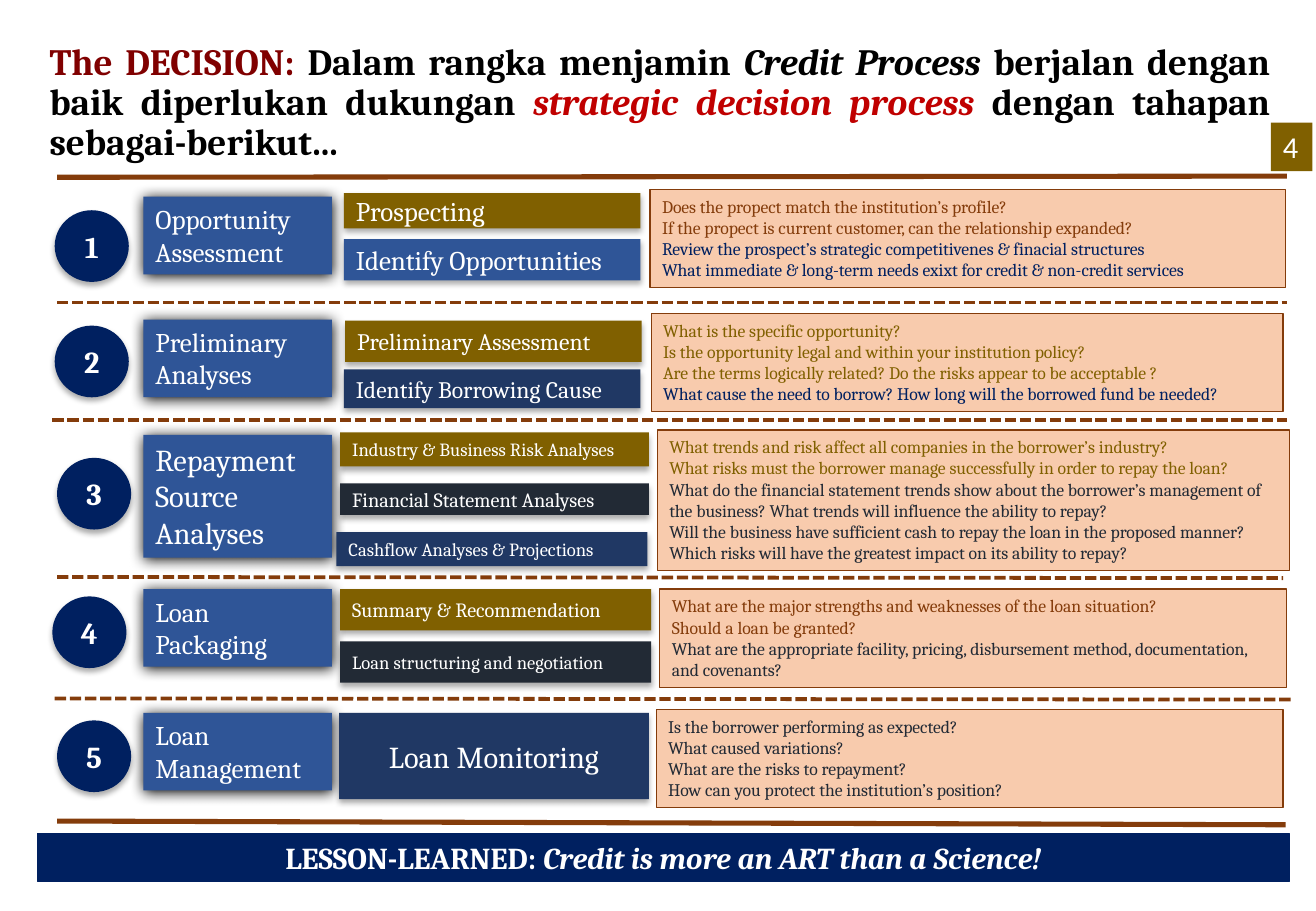
from lxml import etree
from pptx import Presentation
from pptx.dml.color import RGBColor
from pptx.enum.dml import MSO_LINE
from pptx.enum.shapes import MSO_CONNECTOR, MSO_SHAPE
from pptx.enum.text import MSO_ANCHOR, PP_ALIGN
from pptx.oxml.ns import qn
from pptx.util import Pt

RECTANGLE, OVAL = MSO_SHAPE.RECTANGLE, MSO_SHAPE.OVAL
STRAIGHT, DASHED = MSO_CONNECTOR.STRAIGHT, MSO_LINE.SQUARE_DOT
TOP, MIDDLE = MSO_ANCHOR.TOP, MSO_ANCHOR.MIDDLE
LEFT, CENTER, JUSTIFY = PP_ALIGN.LEFT, PP_ALIGN.CENTER, PP_ALIGN.JUSTIFY

NAVY, BLUE, DEEP, SLATE = "002060", "2F5597", "203864", "222A35"
GOLD, BROWN, PEACH = "806000", "843C0B", "F8CBAD"
WHITE, BLACK, MAROON, RED = "FFFFFF", "000000", "800000", "C00000"
GLOW, DROP = (100, 8.5, 1), (32, 3.5, 2.2)


def color(value):
    return RGBColor.from_string(value)


class Page:
    font = "Cambria"

    def __init__(self, deck):
        self.slide = deck.slides.add_slide(deck.slide_layouts[6])

    def set_text(self, paragraph, text, size, ink, align=LEFT, bold=False, font=None):
        paragraph.text = text
        paragraph.alignment = align
        paragraph.font.name = font or self.font
        paragraph.font.size = Pt(size)
        paragraph.font.bold = bold
        paragraph.font.color.rgb = color(ink)

    def add_span(self, paragraph, text, ink=None, italic=False):
        span = paragraph.add_run()
        span.text = text
        span.font.italic = italic
        if ink:
            span.font.color.rgb = color(ink)

    def title(self, place, spans):
        box = self.slide.shapes.add_textbox(*map(Pt, place))
        frame = box.text_frame
        frame.word_wrap = True
        frame.vertical_anchor = MIDDLE
        paragraph = frame.paragraphs[0]
        self.set_text(paragraph, "", 22, BLACK, JUSTIFY, True)
        paragraph.line_spacing = 0.9
        for span in spans:
            self.add_span(paragraph, *span)

    def box(self, place, fill, lines, size, align=LEFT, anchor=MIDDLE, bold=False,
            kind=RECTANGLE, edge=None, shadow=None, font=None):
        box = self.slide.shapes.add_shape(kind, *map(Pt, place))
        box.fill.solid()
        box.fill.fore_color.rgb = color(fill)
        if edge:
            box.line.color.rgb = color(edge)
            box.line.width = Pt(0.75)
        else:
            box.line.fill.background()
        box.shadow.inherit = False
        if shadow:
            self.cast(box, *shadow)
        frame = box.text_frame
        frame.word_wrap = True
        frame.vertical_anchor = anchor
        for index, (text, ink) in enumerate(lines):
            paragraph = frame.add_paragraph() if index else frame.paragraphs[0]
            self.set_text(paragraph, text, size, ink, align, bold, font)
        return box

    def cast(self, box, opacity, blur, distance):
        effects = box._element.spPr.find(qn("a:effectLst"))
        outer = etree.SubElement(effects, qn("a:outerShdw"), blurRad=str(Pt(blur)),
                                 dist=str(Pt(distance)), dir="5400000", rotWithShape="0")
        tint = etree.SubElement(outer, qn("a:srgbClr"), val=BLACK)
        etree.SubElement(tint, qn("a:alpha"), val=str(opacity * 1000))

    def rule(self, ends, width, dash=None):
        line = self.slide.shapes.add_connector(STRAIGHT, *map(Pt, ends))
        line.line.color.rgb = color(BROWN)
        line.line.width = Pt(width)
        if dash:
            line.line.dash_style = dash
        etree.SubElement(line._element.spPr, qn("a:effectLst"))


STAGES = [
    ("Opportunity Assessment", 16, (116.6, 46), (32.4, 124.6),
     [("Prospecting", 16, GOLD, LEFT, (203.8, 114.5, 175.7, 20.9)),
      ("Identify Opportunities", 16, BLUE, LEFT, (203.8, 141.8, 175.7, 24.5))],
     (385.2, 112.3, 376.6, 58.3),
     [("Does the propect match the institution’s profile?", BROWN),
      ("If the propect is current customer, can the relationship expanded?", BROWN),
      ("Review the prospect’s strategic competitivenes & finacial structures", NAVY),
      ("What immediate & long-term needs exixt for credit & non-credit services", NAVY)]),
    ("Preliminary Analyses", 16, (189.4, 46), (32.4, 193),
     [("Preliminary Assessment", 14, GOLD, LEFT, (204.5, 190.1, 175.7, 24.5)),
      ("Identify Borrowing Cause", 14, DEEP, LEFT, (203.8, 218.9, 175.7, 23))],
     (385.9, 185.8, 374.4, 58.3),
     [("What is the specific opportunity?", GOLD),
      ("Is the opportunity legal and within your institution policy?", GOLD),
      ("Are the terms logically related? Do the risks appear to be acceptable ?", GOLD),
      ("What cause the need to borrow? How long will the borrowed fund be needed?", NAVY)]),
    ("Repayment Source Analyses", 18, (257.8, 72.7), (33.8, 271.4),
     [("Industry & Business Risk Analyses", 11, GOLD, LEFT, (201.6, 256.3, 182.9, 20.2)),
      ("Financial Statement Analyses", 12, SLATE, LEFT, (201.6, 286.6, 182.9, 18.7)),
      ("Cashflow Analyses & Projections", 11, DEEP, LEFT, (199.4, 315.4, 184.3, 20.2))],
     (389.5, 254.9, 374.4, 83.5),
     [("What trends and risk affect all companies in the borrower’s industry?", GOLD),
      ("What risks must the borrower manage successfully in order to repay the loan?", GOLD),
      ("What do the financial statement trends show about the borrower’s management of "
       "the business? What trends will influence the ability to repay?", SLATE),
      ("Will the business have sufficient cash to repay the loan in the proposed manner? "
       "Which risks will have the greatest impact on its ability to repay?", SLATE)]),
    ("Loan Packaging", 16, (349.2, 46), (31, 353.5),
     [("Summary & Recommendation", 12, GOLD, LEFT, (201.6, 349.2, 184.3, 24.5)),
      ("Loan structuring and negotiation", 11, SLATE, LEFT, (201.6, 380.2, 184.3, 24.5))],
     (391, 349.2, 371.5, 58.3),
     [("What are the major strengths and weaknesses of the loan situation?", BROWN),
      ("Should a loan be granted?", BROWN),
      ("What are the appropriate facility, pricing, disbursement method, documentation, "
       "and covenants?", SLATE)]),
    ("Loan Management", 16, (422.6, 46), (33.8, 427),
     [("Loan Monitoring", 18, DEEP, CENTER, (200.9, 422.6, 183.6, 51.1))],
     (388.8, 420.5, 371.5, 58.3),
     [("Is the borrower performing as expected?", SLATE),
      ("What caused variations?", SLATE),
      ("What are the risks to repayment?", SLATE),
      ("How can you protect the institution’s position?", SLATE)]),
]
DIVIDERS = [(33.8, 179.3, 762.5, 179.3), (31, 249.1, 762.5, 249.1),
            (33.8, 342, 760.3, 342.7), (32.4, 414, 765.4, 414.7)]
BORDERS = [(33.8, 105.1, 762.5, 104.4), (33.8, 486.7, 761.8, 488.9)]


def main():
    deck = Presentation()
    deck.slide_width, deck.slide_height = Pt(779.76), Pt(540)
    page = Page(deck)
    page.title((22.3, 15.8, 737.3, 90.7), [
        ("The DECISION: ", MAROON),
        ("Dalam rangka menjamin ",),
        ("Credit Process ", None, True),
        ("berjalan dengan baik diperlukan dukungan ",),
        ("strategic decision process ", RED, True),
        ("dengan tahapan sebagai-berikut...",)])
    for number, stage in enumerate(STAGES, 1):
        name, size, (top, height), badge, steps, place, questions = stage
        page.box((85, top, 111.6, height), BLUE, [(name, WHITE)], size,
                 anchor=TOP, shadow=GLOW)
        page.box((*badge, 43.9, 42.5), NAVY, [(str(number), WHITE)], 18, CENTER,
                 bold=True, kind=OVAL, shadow=DROP)
        for step, step_size, fill, align, step_place in steps:
            page.box(step_place, fill, [(step, WHITE)], step_size, align, shadow=DROP)
        page.box(place, PEACH, questions, 10.5, anchor=TOP, edge=BROWN)
    for ends in DIVIDERS:
        page.rule(ends, 2.25, DASHED)
    for ends in BORDERS:
        page.rule(ends, 3)
    banner = page.box((22.3, 493.9, 741.6, 28.8), NAVY, [("", WHITE)], 18, CENTER, TOP,
                      bold=True, edge=NAVY)
    lesson = banner.text_frame.paragraphs[0]
    page.add_span(lesson, "LESSON-LEARNED: ")
    page.add_span(lesson, "Credit is more an ART than a Science!", italic=True)
    page.box((753.1, 72.7, 24.5, 28.8), GOLD, [("4", WHITE)], 18, anchor=TOP, font="Calibri")
    deck.save("out.pptx")


if __name__ == "__main__":
    main()
